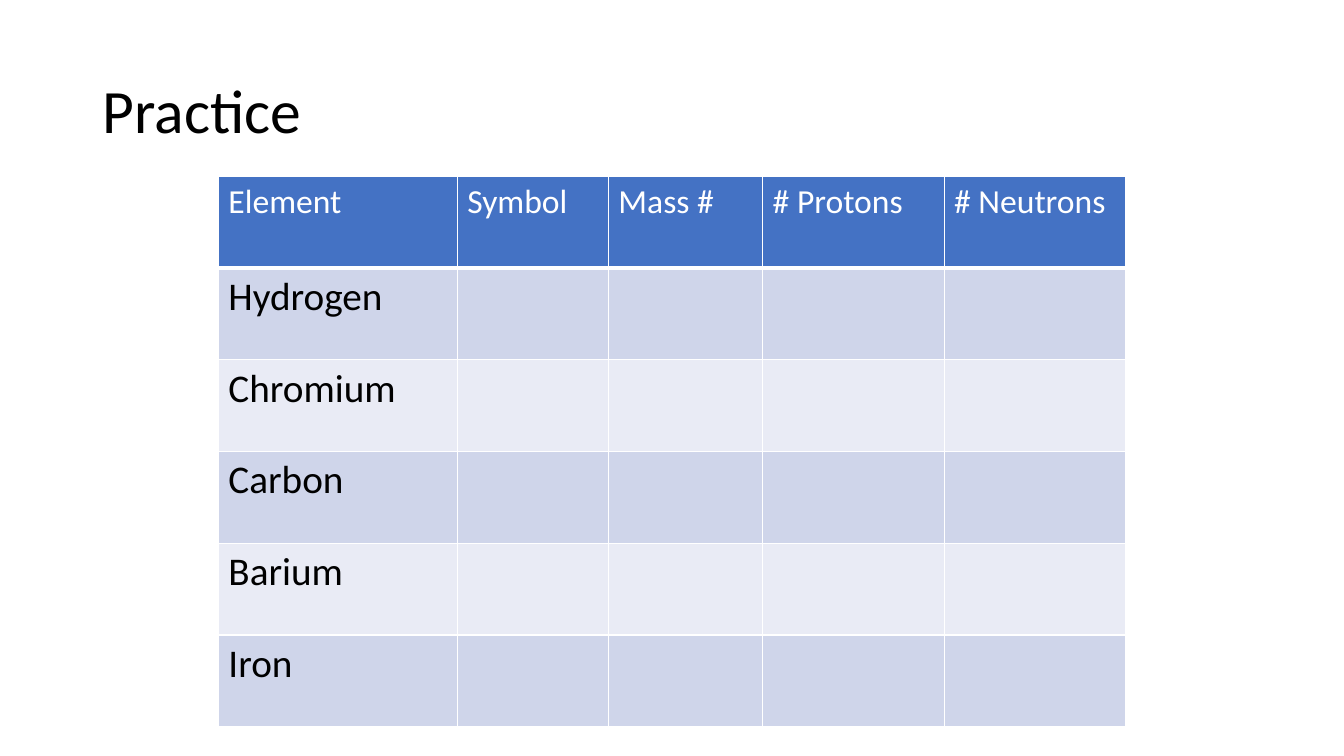
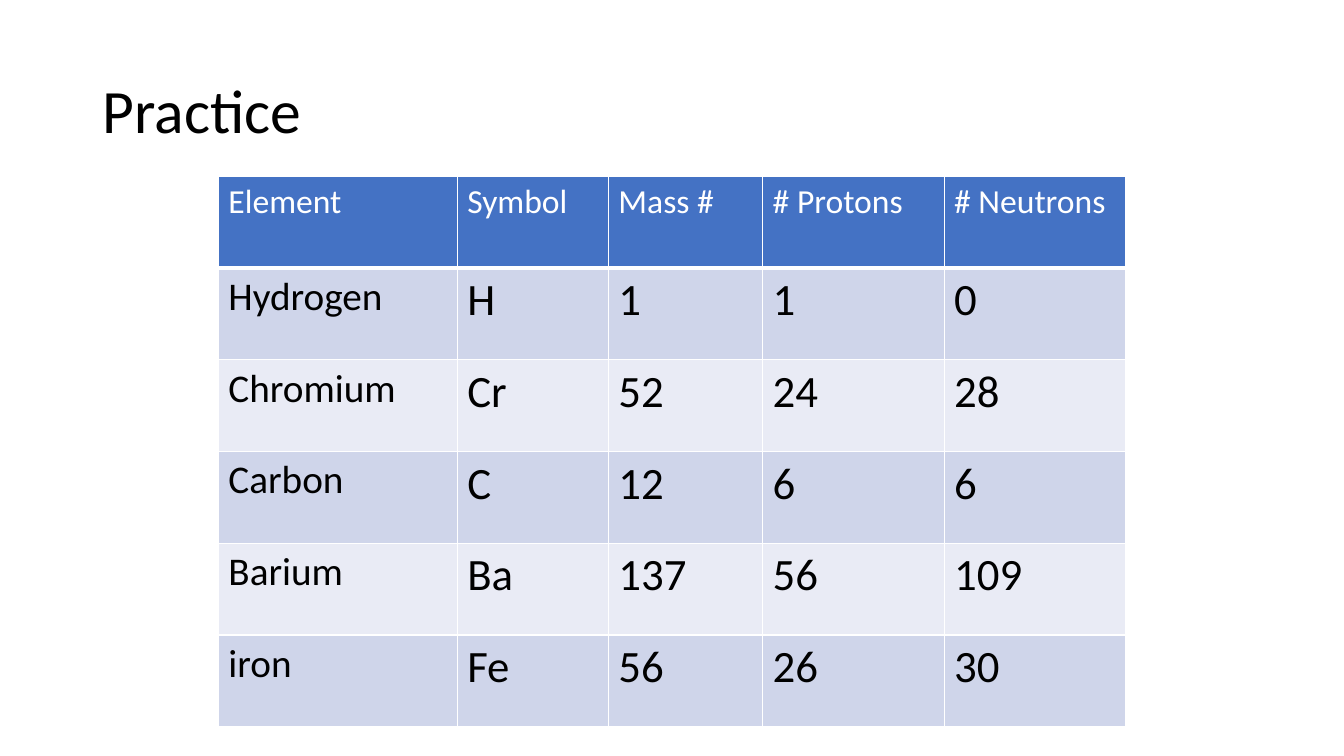
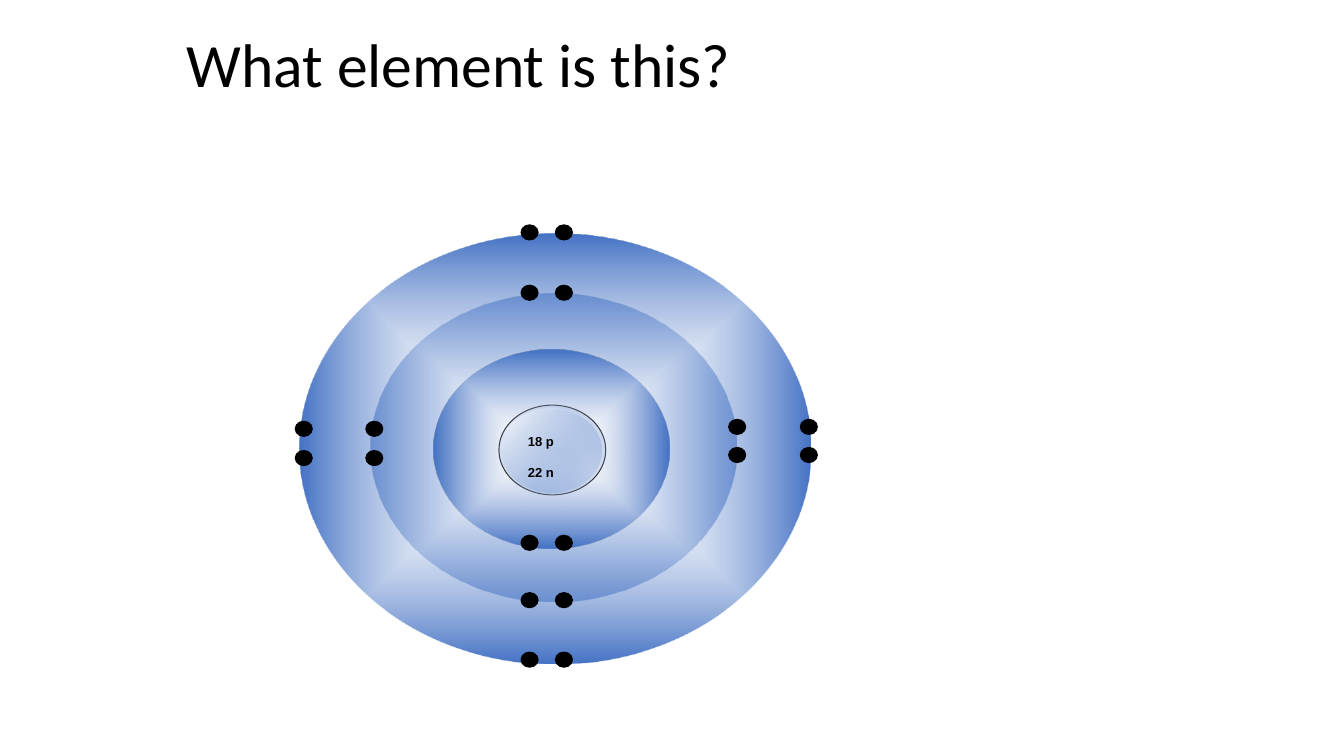
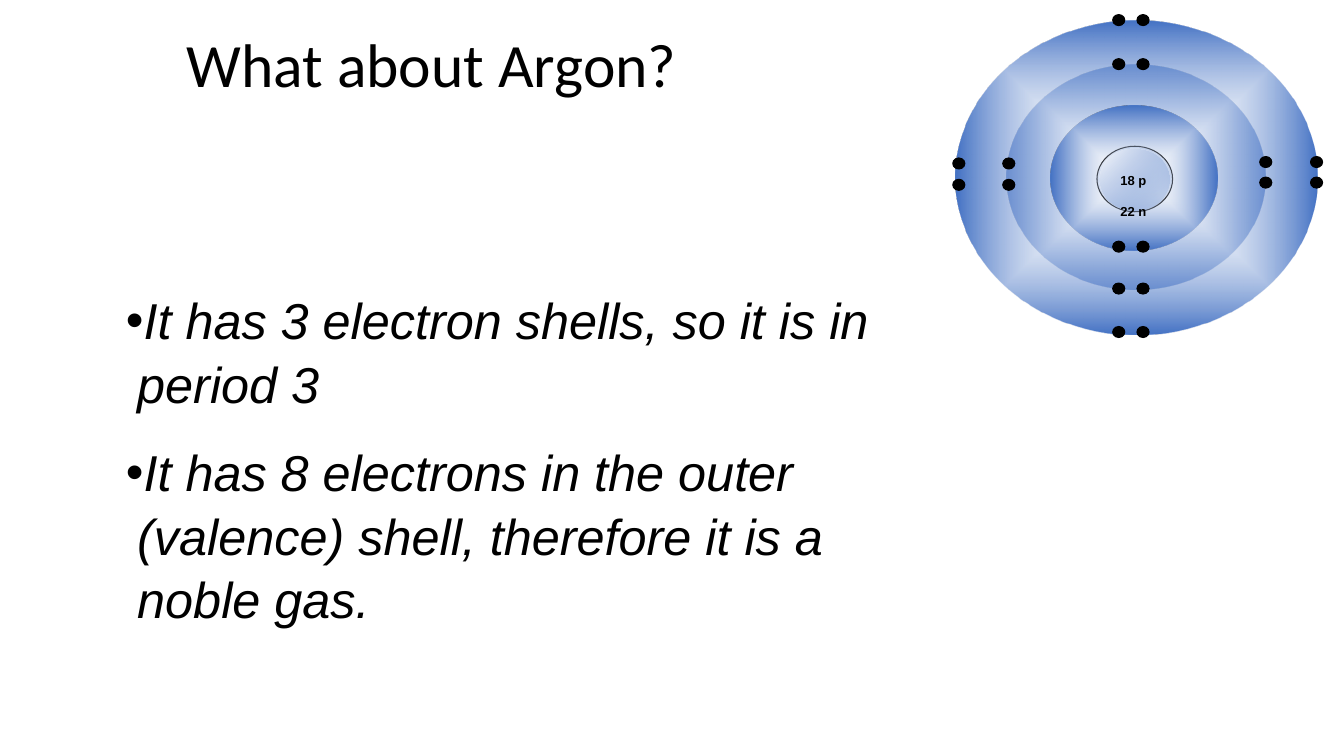
from pptx import Presentation
from pptx.dml.color import RGBColor
from pptx.enum.shapes import MSO_SHAPE
from pptx.enum.text import MSO_ANCHOR, MSO_AUTO_SIZE, PP_ALIGN
from pptx.oxml import parse_xml
from pptx.oxml.ns import nsdecls, qn
from pptx.util import Pt

COLORS = {
    "ink": "000000",
    "paper": "FFFFFF",
    "accent": "4472C4",
    "band_dark": "CFD5EA",
    "band_light": "E9EBF5",
}
HEADINGS = ["Element", "Symbol", "Mass #", "# Protons", "# Neutrons"]
ANSWERS = [
    ["Hydrogen", "H", "1", "1", "0"],
    ["Chromium", "Cr", "52", "24", "28"],
    ["Carbon", "C", "12", "6", "6"],
    ["Barium", "Ba", "137", "56", "109"],
    ["iron", "Fe", "56", "26", "30"],
]
COLUMN_WIDTHS = [170.6, 108, 110.2, 129.6, 129.6]
ROW_HEIGHT = 65.52

ATOM_WIDTH, ATOM_HEIGHT = 365, 306.7
DOT_WIDTH, DOT_HEIGHT = 12.2, 10.8
MIDDLE_SHELL = (51, 43, 261.4, 219.6)
OUTER_SHELL = (0, 0, ATOM_WIDTH, ATOM_HEIGHT)
NUCLEUS = (142.6, 122.4, 76.3, 64.1)
INNER_SHELL = (95.8, 82.8, 168.5, 141.8)
CORE = (144.7, 124.6, 71.3, 60.5)
LABEL = (156.2, 128.9, 123.8, 122.4)
ELECTRONS = (
    [(x, y) for y in (220.7, 261.7, 42.1, 304.2, -1) for x in (164.5, 189)]
    + [(x, y) for x in (53.6, 3.2) for y in (139.3, 160.2)]
    + [(x, y) for x in (312.8, 364) for y in (137.9, 158)]
)


def add_text(para, text, size, color="ink", font="Calibri", bold=False,
             italic=False, baseline=None, line_spacing=None, space_before=0):
    para.alignment = PP_ALIGN.LEFT
    para.space_before = Pt(space_before)
    if line_spacing:
        para.line_spacing = line_spacing
    span = para.add_run()
    span.text = text
    span.font.name = font
    span.font.size = Pt(size)
    span.font.bold = bold
    span.font.italic = italic
    span.font.color.rgb = RGBColor.from_string(COLORS[color])
    if baseline:
        span.font._element.set("baseline", str(baseline * 1000))


class Lesson:
    def __init__(self):
        self.deck = Presentation()
        self.deck.slide_width, self.deck.slide_height = Pt(960), Pt(540)
        self.page = None

    def place(self, shape, left, top, width, height):
        shape.left, shape.top = Pt(left), Pt(top)
        shape.width, shape.height = Pt(width), Pt(height)

    def start_page(self, title, area, layout=5):
        self.page = self.deck.slides.add_slide(self.deck.slide_layouts[layout])
        box = self.page.shapes.title
        self.place(box, *area)
        box.text_frame.auto_size = MSO_AUTO_SIZE.NONE
        box.text_frame.vertical_anchor = MSO_ANCHOR.MIDDLE
        add_text(box.text_frame.paragraphs[0], title, 44, line_spacing=0.9)

    def add_list(self, items, area):
        box = self.page.placeholders[1]
        self.place(box, *area)
        frame = box.text_frame
        frame.auto_size = MSO_AUTO_SIZE.NONE
        for index, item in enumerate(items):
            para = frame.paragraphs[0] if index == 0 else frame.add_paragraph()
            add_text(para, item, 36, font="Arial", italic=True,
                     line_spacing=1.05, space_before=18 if index else 0)
            settings = para._p.get_or_add_pPr()
            settings.set("marL", str(Pt(8)))
            settings.set("indent", str(-Pt(8)))
            settings.append(parse_xml(f'<a:buChar {nsdecls("a")} char="•"/>'))

    def style_cell(self, cell, color, bottom=1):
        settings = cell._tc.get_or_add_tcPr()
        for side, weight in (("L", 1), ("R", 1), ("T", 1), ("B", bottom)):
            settings.append(parse_xml(
                f'<a:ln{side} {nsdecls("a")} w="{Pt(weight)}"><a:solidFill>'
                f'<a:srgbClr val="{COLORS["paper"]}"/></a:solidFill></a:ln{side}>'))
        cell.fill.solid()
        cell.fill.fore_color.rgb = RGBColor.from_string(COLORS[color])

    def add_table(self, rows):
        grid = self.page.shapes.add_table(
            len(rows) + 1, len(HEADINGS), Pt(156), Pt(126),
            Pt(sum(COLUMN_WIDTHS)), Pt(ROW_HEIGHT * (len(rows) + 1))).table
        for column, width in zip(grid.columns, COLUMN_WIDTHS):
            column.width = Pt(width)
        for row_index, row in enumerate([HEADINGS] + rows):
            grid.rows[row_index].height = Pt(ROW_HEIGHT)
            band = "band_dark" if row_index % 2 else "band_light"
            for column_index, text in enumerate(row):
                cell = grid.cell(row_index, column_index)
                para = cell.text_frame.paragraphs[0]
                if row_index == 0:
                    self.style_cell(cell, "accent", bottom=3)
                    add_text(para, text, 24, color="paper")
                else:
                    self.style_cell(cell, band)
                    if text:
                        add_text(para, text, 32 if column_index else 28)

    def add_ellipse(self, group, area, outlined=False):
        left, top, width, height = area
        shape = group.shapes.add_shape(
            MSO_SHAPE.OVAL, Pt(left), Pt(top), Pt(width), Pt(height))
        shape.shadow.inherit = False
        if outlined:
            shape.line.color.rgb = RGBColor.from_string(COLORS["ink"])
            shape.line.width = Pt(0.75)
        else:
            shape.line.fill.background()
        return shape

    def fill_gradient(self, shape, start_alpha, end_alpha, radial):
        direction = (
            '<a:path path="shape"><a:fillToRect l="50000" t="50000" r="50000" b="50000"/></a:path>'
            if radial else '<a:lin ang="2700000" scaled="1"/>')
        stops = "".join(
            f'<a:gs pos="{position}"><a:srgbClr val="{COLORS[color]}">'
            f'<a:alpha val="{alpha * 1000}"/></a:srgbClr></a:gs>'
            for position, color, alpha in (
                (0, "paper", start_alpha), (100000, "accent", end_alpha)))
        shape.fill.background()
        properties = shape._element.spPr
        properties.replace(properties.find(qn("a:noFill")), parse_xml(
            f'<a:gradFill {nsdecls("a")} rotWithShape="1"><a:gsLst>{stops}</a:gsLst>'
            f'{direction}</a:gradFill>'))

    def add_atom(self, left, top, width, height):
        scale_x, scale_y = width / ATOM_WIDTH, height / ATOM_HEIGHT

        def scaled(x, y, w, h):
            return left + x * scale_x, top + y * scale_y, w * scale_x, h * scale_y

        group = self.page.shapes.add_group_shape()
        for area, start_alpha, end_alpha, radial, outlined in (
                (MIDDLE_SHELL, 6, 100, True, False),
                (OUTER_SHELL, 0, 100, True, False),
                (NUCLEUS, 100, 6, False, True),
                (INNER_SHELL, 0, 100, True, False),
                (CORE, 100, 6, False, False)):
            shape = self.add_ellipse(group, scaled(*area), outlined)
            self.fill_gradient(shape, start_alpha, end_alpha, radial)
        for x, y in ELECTRONS:
            area = scaled(x - DOT_WIDTH / 2, y - DOT_HEIGHT / 2, DOT_WIDTH, DOT_HEIGHT)
            dot = self.add_ellipse(group, area, outlined=True)
            dot.fill.solid()
            dot.fill.fore_color.rgb = RGBColor.from_string(COLORS["ink"])
        box = group.shapes.add_textbox(*(Pt(length) for length in scaled(*LABEL)))
        frame = box.text_frame
        frame.word_wrap = True
        add_text(frame.paragraphs[0], "18 p", 16, font="Arial", bold=True,
                 baseline=-23, space_before=8)
        add_text(frame.add_paragraph(), "22 n", 16, font="Arial", bold=True,
                 baseline=24, space_before=8)


def main():
    lesson = Lesson()
    practice_title = (66, 28.8, 828, 104.4)
    question_title = (126, 6, 576, 84)

    names = [row[0].capitalize() for row in ANSWERS]
    blanks = [[name] + [""] * (len(HEADINGS) - 1) for name in names]
    for rows in (blanks, ANSWERS):
        lesson.start_page("Practice", practice_title)
        lesson.add_table(rows)

    lesson.start_page("What element is this?", question_title)
    lesson.add_atom(213.8, 167, ATOM_WIDTH, ATOM_HEIGHT)

    lesson.start_page("What about Argon?", question_title, layout=1)
    lesson.add_list([
        "It has 3 electron shells, so it is in period 3",
        "It has 8 electrons in the outer (valence) shell, therefore it is a noble gas.",
    ], (82.8, 200.9, 599.8, 247))
    lesson.add_atom(682.6, 15.1, 258.5, 223.9)

    lesson.deck.save("out.pptx")


if __name__ == "__main__":
    main()
